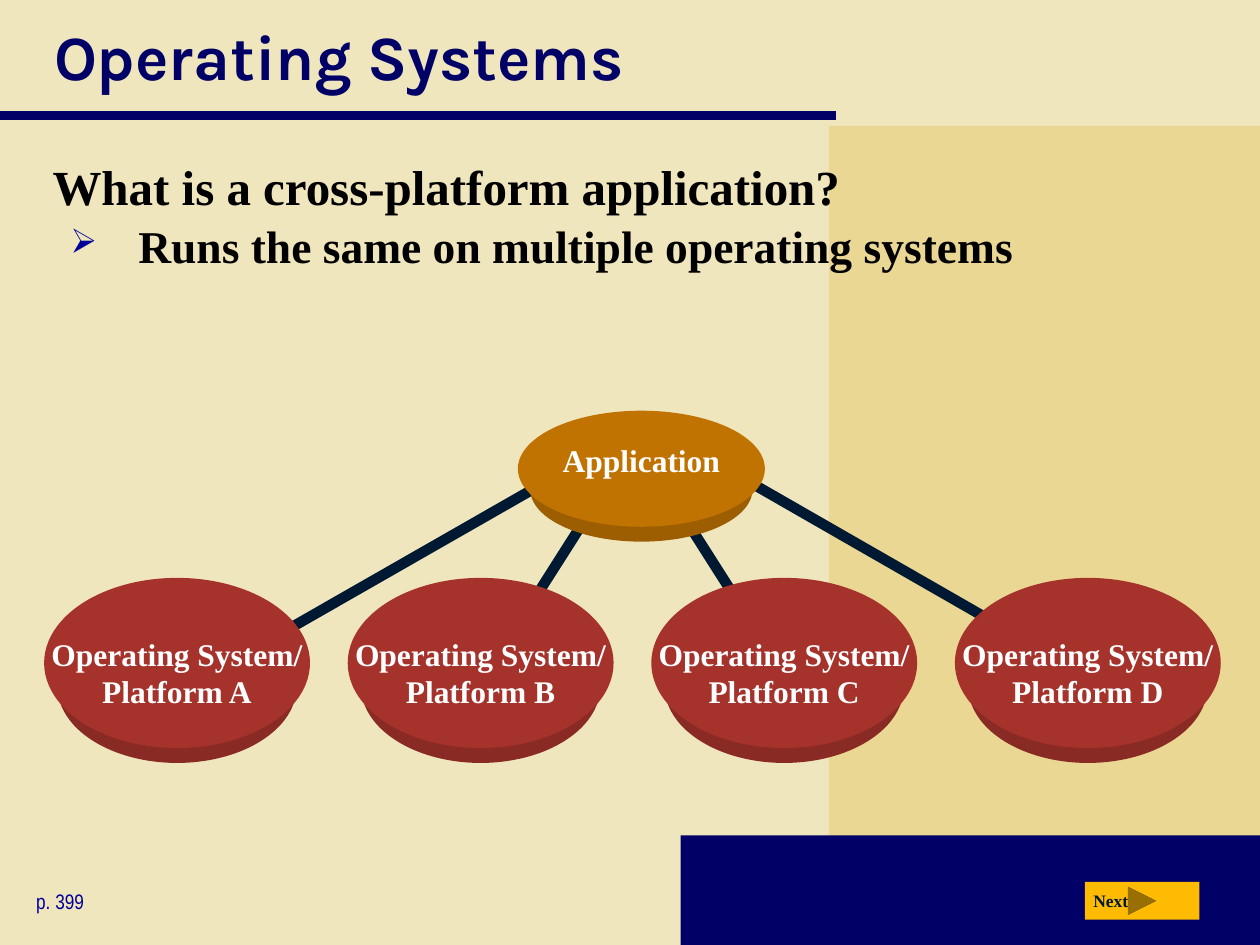
import pptx
import pptx.util
import pptx.dml.color
import pptx.enum.shapes
import pptx.enum.text
import pptx.oxml
import pptx.oxml.ns
from dataclasses import dataclass

Cm = pptx.util.Cm
Pt = pptx.util.Pt
SHAPE = pptx.enum.shapes.MSO_SHAPE
ANCHOR = pptx.enum.text.MSO_ANCHOR
CENTER = pptx.enum.text.PP_ALIGN.CENTER


@dataclass(frozen=True)
class Theme:
    """Colours, fonts and type sizes of the slide."""
    paper: str = "F0E6BE"
    sand: str = "E9D793"
    navy: str = "000066"
    blue: str = "000099"
    ink: str = "001932"
    black: str = "000000"
    white: str = "FFFFFF"
    button: str = "FFBA02"
    red: tuple = ("A5322B", "8A2A24")
    orange: tuple = ("C07300", "9C5E00")
    serif: str = "Times New Roman"
    heading: str = "Karla"
    narrow: str = "Arial Narrow"
    title: int = 36
    question: int = 28
    answer: int = 26
    label: int = 18
    page: int = 12
    small: int = 10


def rgb(value):
    """Return the colour for a hex value."""
    return pptx.dml.color.RGBColor.from_string(value)


def write(tf, text, font, size, color, bold=True, align=None, anchor=ANCHOR.TOP,
          wrap=True, insets=(0.25, 0.13, 0.25, 0.13), before=0):
    """Write one formatted paragraph, breaking lines at newlines."""
    tf.word_wrap = wrap
    tf.vertical_anchor = anchor
    tf.margin_left, tf.margin_top, tf.margin_right, tf.margin_bottom = map(Cm, insets)
    p = tf.paragraphs[0]
    p.alignment = align
    p.space_before = Pt(before)
    for i, line in enumerate(text.split("\n")):
        if i:
            p.add_line_break()
        r = p.add_run()
        r.text = line
        r.font.name, r.font.size, r.font.bold = font, Pt(size), bold
        r.font.color.rgb = rgb(color)
    return p


class Builder:
    """Holds the theme and the current slide."""

    def __init__(self, slide, theme):
        """Keep the slide and paint its background."""
        self.s, self.theme = slide, theme
        slide.background.fill.solid()
        slide.background.fill.fore_color.rgb = rgb(theme.paper)

    def shape(self, kind, box, color):
        """Add a filled preset shape without outline."""
        sp = self.s.shapes.add_shape(kind, *map(Cm, box))
        sp.shadow.inherit = False
        sp.fill.solid()
        sp.fill.fore_color.rgb = rgb(color)
        sp.line.fill.background()
        return sp

    def line(self, start, end, color, width):
        """Add a straight line between two points."""
        ln = self.s.shapes.add_connector(
            pptx.enum.shapes.MSO_CONNECTOR.STRAIGHT, *map(Cm, start + end))
        ln.line.color.rgb = rgb(color)
        ln.line.width = Pt(width)
        ln._element.spPr.append(pptx.oxml.parse_xml(
            f'<a:effectLst {pptx.oxml.ns.nsdecls("a")}/>'))

    def text(self, box, text, **style):
        """Add a text box and return its paragraph."""
        sp = self.s.shapes.add_textbox(*map(Cm, box))
        return write(sp.text_frame, text, **style)

    def bullet(self, p, char, color, percent, left, hanging):
        """Give a paragraph a bullet and a hanging indent."""
        pPr = p._p.get_or_add_pPr()
        pPr.set("marL", str(Cm(left)))
        pPr.set("indent", str(-Cm(hanging)))
        ns = pptx.oxml.ns.nsdecls("a")
        for xml in (f'<a:buClr {ns}><a:srgbClr val="{color}"/></a:buClr>',
                    f'<a:buSzPct {ns} val="{percent * 1000}"/>',
                    f'<a:buChar {ns} char="{char}"/>'):
            pPr.append(pptx.oxml.parse_xml(xml))

    def disc(self, box, colors, drop=0.3, taper=0.9):
        """Add an ellipse with a darker, narrower rim below it."""
        x, y, w, h = box
        face, rim = colors
        self.shape(SHAPE.OVAL, (x + w * (1 - taper) / 2, y + h * (1 - taper) + drop,
                                w * taper, h * taper), rim)
        return self.shape(SHAPE.OVAL, box, face)


def main():
    """Build the slide and save it."""
    prs = pptx.Presentation()
    prs.slide_width, prs.slide_height = Cm(25.4), Cm(19.05)
    t = Theme()
    b = Builder(prs.slides.add_slide(prs.slide_layouts[6]), t)

    b.shape(SHAPE.RECTANGLE, (16.71, 2.54, 8.69, 16.51), t.sand)
    b.shape(SHAPE.RECTANGLE, (13.72, 16.84, 11.68, 2.21), t.navy)
    b.line((0, 2.33), (16.86, 2.33), t.navy, 5)

    b.text((0.84, 0, 23.85, 2.24), "Operating Systems", font=t.heading,
           size=t.title, color=t.navy, anchor=ANCHOR.MIDDLE)
    b.text((0.81, 3.02, 21.64, 2.03), "What is a cross-platform application?",
           font=t.serif, size=t.question, color=t.black, before=5)
    answer = b.text((0.84, 4.27, 21.64, 2.11),
                    "Runs the same on multiple operating systems",
                    font=t.serif, size=t.answer, color=t.black, before=1.3)
    b.bullet(answer, "➢", t.blue, 75, 1.7, 1.37)

    b.shape(SHAPE.ACTION_BUTTON_FORWARD_OR_NEXT, (21.87, 17.78, 2.31, 0.76), t.button)
    b.text((21.79, 17.81, 1.3, 0.69), "Next", font=t.serif, size=t.small,
           color=t.ink, wrap=False)
    b.text((0.48, 17.78, 4.29, 0.76), "p. 399", font=t.narrow, size=t.page,
           color=t.blue, bold=False)

    links = [((11.15, 9.63), (5.03, 13.13)), ((11.99, 10.16), (10.26, 12.88)),
             ((13.59, 10.11), (15.32, 12.83)), ((14.73, 9.5), (20.83, 13))]
    for i, (name, (start, end)) in enumerate(zip("ABCD", links)):
        b.line(start, end, t.ink, 6)
        sp = b.disc((0.89 + 6.12 * i, 11.65, 5.36, 3.43), t.red)
        write(sp.text_frame, f"Operating System/\nPlatform {name}", font=t.serif,
              size=t.label, color=t.white, align=CENTER, wrap=False,
              insets=(0.25, 0.64, 0.25, 0))

    b.disc((10.44, 8.28, 4.98, 2.34), t.orange)
    b.text((10.44, 8.89, 4.98, 1.14), "Application", font=t.serif, size=t.label,
           color=t.white, align=CENTER, insets=(0.25, 0, 0.25, 0.38))

    prs.save("out.pptx")


if __name__ == "__main__":
    main()
